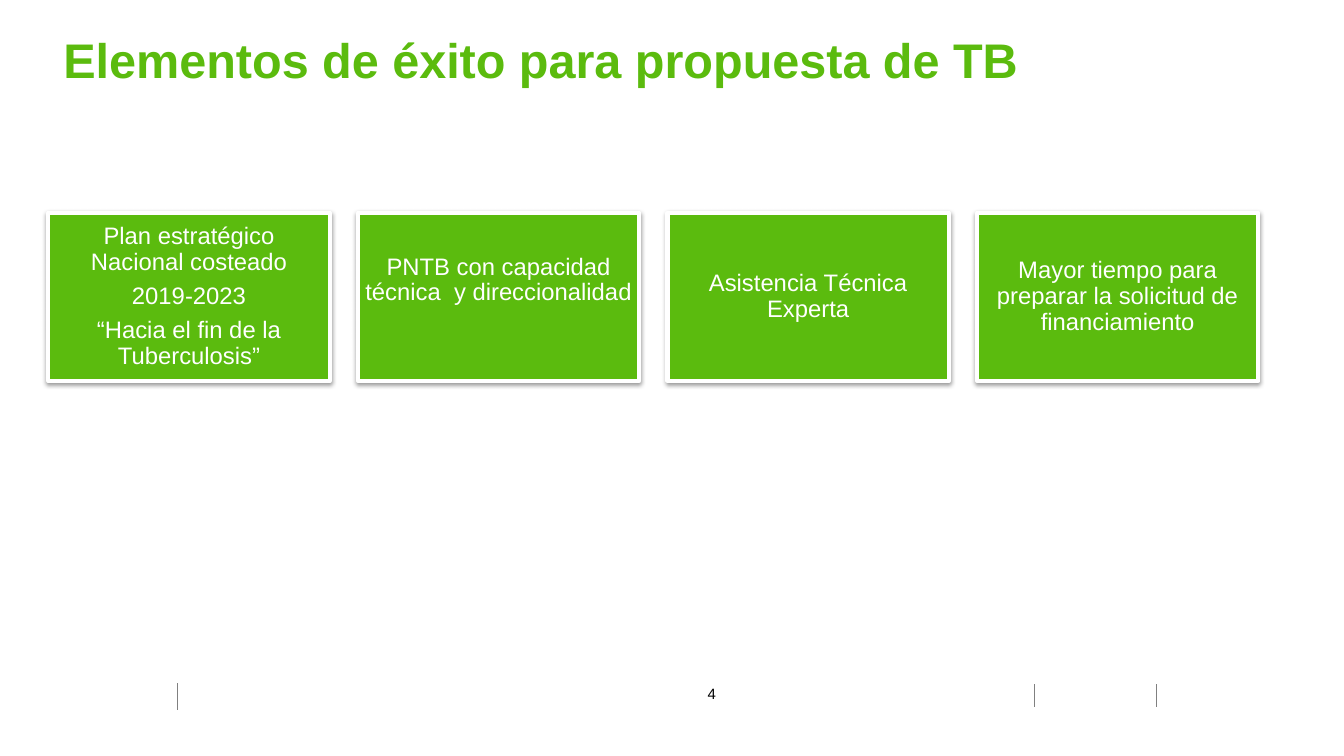
import pptx
import pptx.dml.color
import pptx.enum.shapes
import pptx.enum.text
import pptx.oxml
import pptx.util

PX = 9144  # EMU per px, 100 px to the inch
COLORS = {"green": "5BBB0E", "white": "FFFFFF", "black": "000000", "gray": "808080"}
A_NS = 'xmlns:a="http://schemas.openxmlformats.org/drawingml/2006/main"'
CARD_SHADOW = (
    f'<a:effectLst {A_NS}><a:outerShdw blurRad="39400" dist="20300" dir="5400000" rotWithShape="0">'
    f'<a:srgbClr val="{COLORS["black"]}"><a:alpha val="38000"/></a:srgbClr>'
    '</a:outerShdw></a:effectLst>'
)
NO_SHADOW = f'<a:effectLst {A_NS}/>'


def rgb(name):
    return pptx.dml.color.RGBColor.from_string(COLORS[name])


def style(paragraph, size, color, bold=False):
    """Set the Arial font of every run in a paragraph."""
    for run in paragraph.runs:
        run.font.name = "Arial"
        run.font.size = pptx.util.Pt(size)
        run.font.bold = bold
        run.font.color.rgb = rgb(color)


presentation = pptx.Presentation()
presentation.slide_width = 1333 * PX
presentation.slide_height = 750 * PX
slide = presentation.slides.add_slide(presentation.slide_layouts[6])
shapes = slide.shapes

# Footer dividers and page number
for x, top, bottom in [(176, 678, 704), (1147, 679, 701), (1026, 679, 701)]:
    divider = shapes.add_connector(
        pptx.enum.shapes.MSO_CONNECTOR.STRAIGHT, x * PX, top * PX, x * PX, bottom * PX)
    divider.line.color.rgb = rgb("gray")
    divider.line.width = pptx.util.Pt(0.25)
    divider._element.spPr.append(pptx.oxml.parse_xml(NO_SHADOW))

page_number = shapes.add_textbox(687 * PX, 674 * PX, 38 * PX, 28 * PX).text_frame
page_number.word_wrap = False
page_number.text = "4"
page_number.paragraphs[0].alignment = pptx.enum.text.PP_ALIGN.CENTER
style(page_number.paragraphs[0], 10.7, "black")

title = shapes.add_textbox(53 * PX, 25 * PX, 1194 * PX, 68 * PX).text_frame
title.word_wrap = True
title.text = "Elementos de éxito para propuesta de TB"
style(title.paragraphs[0], 34.7, "green", bold=True)

# Success factors: paragraphs and bottom inset of each card
CARD_LEFT, CARD_TOP, CARD_WIDTH, CARD_HEIGHT = 48, 211, 279, 167
CARD_PITCH = 307
INSET = 7
success_factors = [
    (["Plan estratégico Nacional costeado", "2019-2023",
      "“Hacia el fin de la Tuberculosis”"], INSET),
    (["PNTB con capacidad técnica  y direccionalidad"], 40),
    (["Asistencia Técnica Experta"], INSET),
    (["Mayor tiempo para preparar la solicitud de financiamiento"], INSET),
]
for column, (lines, bottom_inset) in enumerate(success_factors):
    card = shapes.add_shape(
        pptx.enum.shapes.MSO_SHAPE.RECTANGLE, (CARD_LEFT + column * CARD_PITCH) * PX,
        CARD_TOP * PX, CARD_WIDTH * PX, CARD_HEIGHT * PX)
    card.fill.solid()
    card.fill.fore_color.rgb = rgb("green")
    card.line.color.rgb = rgb("white")
    card.line.width = pptx.util.Pt(3)
    card._element.spPr.append(pptx.oxml.parse_xml(CARD_SHADOW))

    factor = card.text_frame
    factor.word_wrap = True
    factor.vertical_anchor = pptx.enum.text.MSO_ANCHOR.MIDDLE
    factor.margin_left = factor.margin_right = factor.margin_top = INSET * PX
    factor.margin_bottom = bottom_inset * PX
    factor.text = "\n".join(lines)
    for paragraph in factor.paragraphs:
        paragraph.alignment = pptx.enum.text.PP_ALIGN.CENTER
        paragraph.line_spacing = 0.9
        style(paragraph, 17, "white")
    for paragraph in factor.paragraphs[:-1]:
        paragraph.space_after = pptx.util.Pt(6)

presentation.save("out.pptx")
